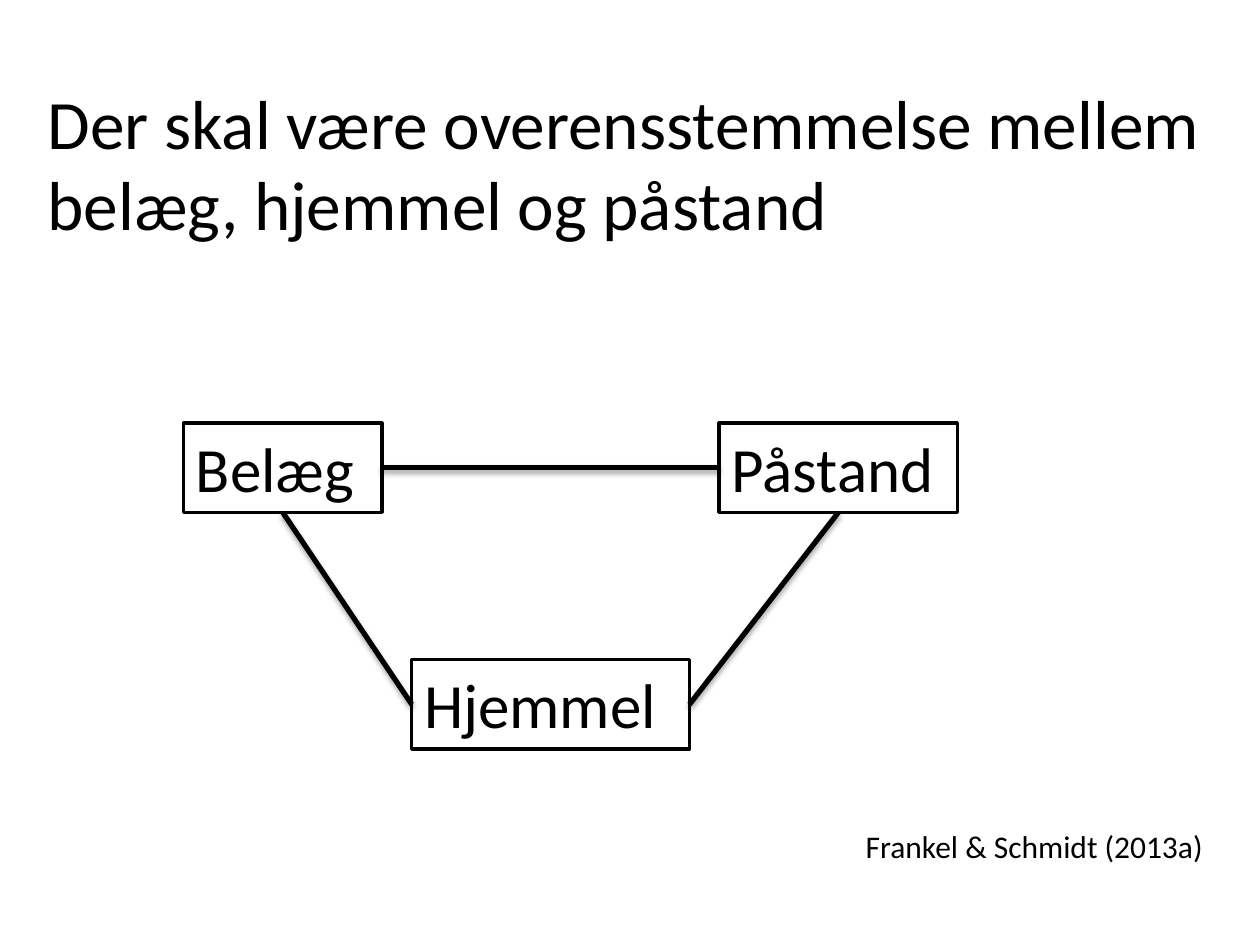
from dataclasses import dataclass

from lxml.etree import SubElement
from pptx import Presentation
from pptx.dml.color import RGBColor
from pptx.enum.shapes import MSO_CONNECTOR, MSO_SHAPE
from pptx.enum.text import MSO_ANCHOR, PP_ALIGN
from pptx.oxml.ns import qn
from pptx.util import Cm, Pt

TOP, LEFT, BOTTOM, RIGHT = range(4)


@dataclass(frozen=True)
class Theme:
    font: str = "Calibri"
    ink: RGBColor = RGBColor(0, 0, 0)
    paper: RGBColor = RGBColor(255, 255, 255)
    title: float = 39.6
    box: float = 36
    source: float = 18
    border: float = 2
    link: float = 3


class SlideBuilder:
    def __init__(self, slide, theme):
        self.s = slide
        self.theme = theme

    def add_text(self, tf, text, size):
        p = tf.paragraphs[0]
        p.alignment = PP_ALIGN.LEFT
        r = p.add_run()
        r.text = text
        r.font.name = self.theme.font
        r.font.size = Pt(size)
        r.font.color.rgb = self.theme.ink
        return p

    def title(self, text, x, y, w, h):
        tf = self.s.shapes.add_textbox(Cm(x), Cm(y), Cm(w), Cm(h)).text_frame
        tf.word_wrap = True
        tf.margin_right = 0
        tf.margin_top = Cm(0.2)
        self.add_text(tf, text, self.theme.title).line_spacing = 0.97

    def box(self, text, x, y, w, h=1.8):
        sp = self.s.shapes.add_shape(
            MSO_SHAPE.RECTANGLE, Cm(x), Cm(y), Cm(w), Cm(h))
        sp.shadow.inherit = False
        sp.fill.solid()
        sp.fill.fore_color.rgb = self.theme.paper
        sp.line.color.rgb = self.theme.ink
        sp.line.width = Pt(self.theme.border)
        tf = sp.text_frame
        tf.word_wrap = True
        tf.vertical_anchor = MSO_ANCHOR.TOP
        self.add_text(tf, text, self.theme.box)
        return sp

    def link(self, start, start_side, end, end_side):
        """Join two boxes with a softly shadowed line."""
        line = self.s.shapes.add_connector(MSO_CONNECTOR.STRAIGHT, 0, 0, 0, 0)
        line.begin_connect(start, start_side)
        line.end_connect(end, end_side)
        line.line.color.rgb = self.theme.ink
        line.line.width = Pt(self.theme.link)
        effects = SubElement(line._element.spPr, qn("a:effectLst"))
        shadow = SubElement(
            effects, qn("a:outerShdw"), blurRad=str(Pt(3.1)),
            dist=str(Pt(1.8)), dir="5400000", rotWithShape="0")
        color = SubElement(shadow, qn("a:srgbClr"), val=str(self.theme.ink))
        SubElement(color, qn("a:alpha"), val="35000")

    def source(self, text, x, y, w, h):
        tf = self.s.shapes.add_textbox(Cm(x), Cm(y), Cm(w), Cm(h)).text_frame
        tf.word_wrap = False
        self.add_text(tf, text, self.theme.source)


def main():
    prs = Presentation()
    prs.slide_width, prs.slide_height = Cm(25.4), Cm(19.05)
    slide = SlideBuilder(
        prs.slides.add_slide(prs.slide_layouts[6]), Theme())

    slide.title("Der skal være overensstemmelse mellem belæg, hjemmel og påstand",
                0.71, 1.52, 24, 4.01)

    grounds = slide.box("Belæg", 3.7, 8.53, 4)
    claim = slide.box("Påstand", 14.5, 8.53, 4.8)
    warrant = slide.box("Hjemmel", 8.3, 13.3, 5.6)

    slide.link(grounds, RIGHT, claim, LEFT)
    slide.link(grounds, BOTTOM, warrant, LEFT)
    slide.link(claim, BOTTOM, warrant, RIGHT)

    slide.source("Frankel & Schmidt (2013a)", 17.2, 16.54, 7.54, 1.02)
    prs.save("out.pptx")


if __name__ == "__main__":
    main()
